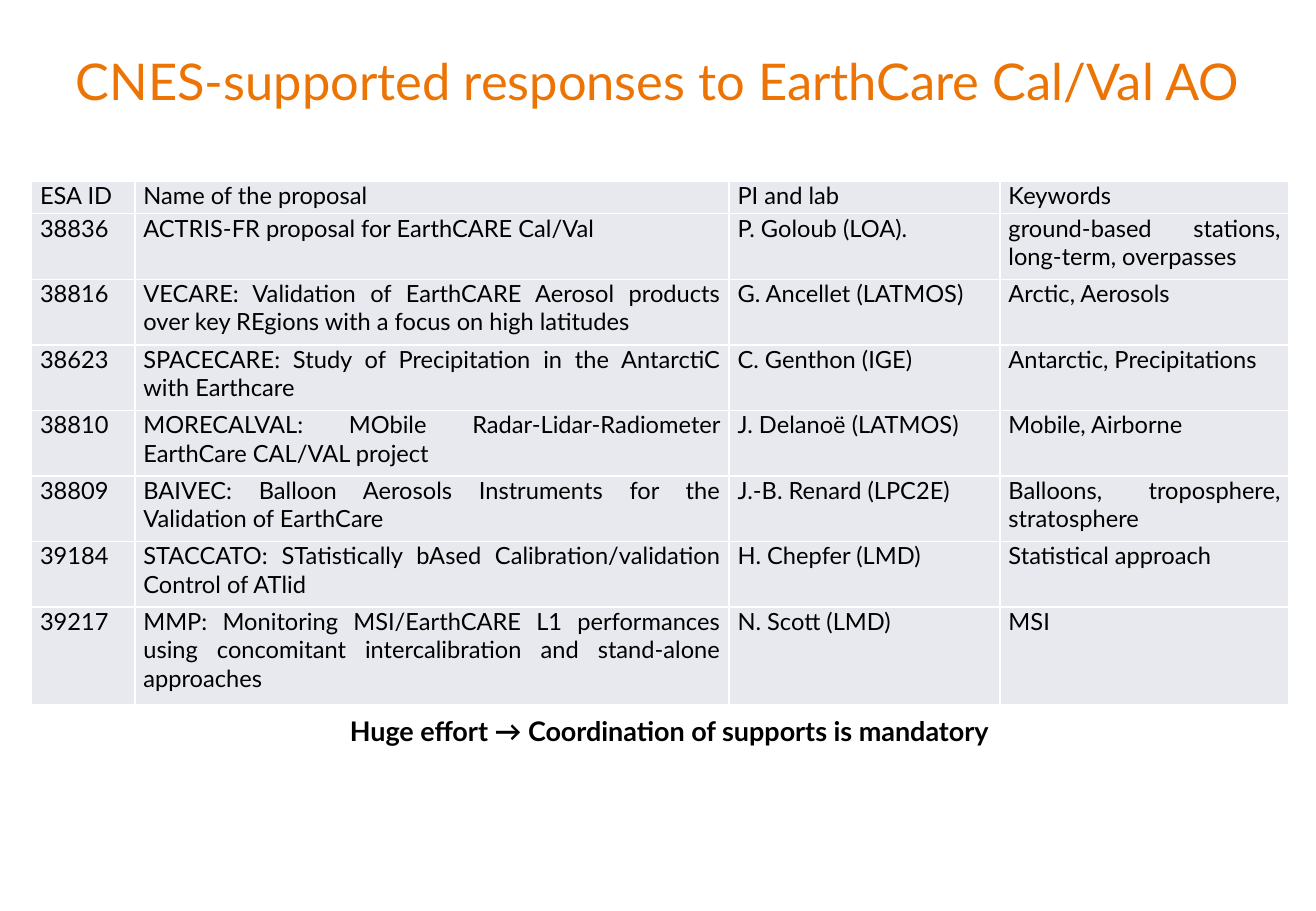
from dataclasses import dataclass

from lxml import etree
from pptx import Presentation
from pptx import util as u
from pptx.dml import color
from pptx.enum import text
from pptx.oxml import ns


@dataclass(frozen=True)
class Theme:
    """Colours, font and type sizes of the slide."""
    font: str = "Lato"
    orange: str = "EC7405"
    black: str = "000000"
    cell: str = "E7E9EE"
    border: str = "FFFFFF"
    title_size: int = 30
    table_size: int = 14
    message_size: int = 16


class SlideBuilder:
    """Adds styled elements to the current slide."""

    def __init__(self, page, theme):
        """Keep the slide and its style."""
        self.page = page
        self.theme = theme

    def add_words(self, frame, words, size, ink, align, bold=False):
        """Put one run into the first paragraph and return the paragraph."""
        frame.word_wrap = True
        frame.vertical_anchor = text.MSO_ANCHOR.TOP
        para = frame.paragraphs[0]
        para.alignment = align
        span = para.add_run()
        span.text = words
        span.font.name = self.theme.font
        span.font.size = u.Pt(size)
        span.font.bold = bold
        span.font.color.rgb = color.RGBColor.from_string(ink)
        return para

    def title(self, words, left, top, width, height):
        """Place and fill the title placeholder."""
        box = self.page.shapes.title
        box.left, box.top = u.Inches(left), u.Inches(top)
        box.width, box.height = u.Inches(width), u.Inches(height)
        frame = box.text_frame
        frame.auto_size = text.MSO_AUTO_SIZE.NONE
        frame.margin_left = frame.margin_right = 0
        frame.margin_top = frame.margin_bottom = 0
        self.add_words(frame, words, self.theme.title_size,
                       self.theme.orange, text.PP_ALIGN.CENTER)

    def message(self, words, left, top, width, height):
        """Add the bold closing message."""
        box = self.page.shapes.add_textbox(
            u.Inches(left), u.Inches(top), u.Inches(width), u.Inches(height))
        para = self.add_words(box.text_frame, words, self.theme.message_size,
                              self.theme.black, text.PP_ALIGN.CENTER,
                              bold=True)
        para.line_spacing = 1.2
        properties = para._p.get_or_add_pPr()
        properties.set("marL", str(u.Inches(0.19)))
        properties.set("indent", "0")

    def borders(self, cell):
        """Draw the four borders of a cell."""
        properties = cell._tc.get_or_add_tcPr()
        for side in ("a:lnL", "a:lnR", "a:lnT", "a:lnB"):
            line = etree.SubElement(properties, ns.qn(side), w=str(u.Pt(1)))
            fill = etree.SubElement(line, ns.qn("a:solidFill"))
            etree.SubElement(fill, ns.qn("a:srgbClr"), val=self.theme.border)

    def table(self, rows, left, top, widths, heights):
        """Add a plain table of justified text."""
        table = self.page.shapes.add_table(
            len(rows), len(widths), u.Inches(left), u.Inches(top),
            u.Inches(sum(widths)), u.Inches(sum(heights))).table
        table.first_row = table.horz_banding = False
        for column, width in zip(table.columns, widths):
            column.width = u.Inches(width)
        for row, height, entries in zip(table.rows, heights, rows):
            row.height = u.Inches(height)
            for cell, words in zip(row.cells, entries):
                cell.margin_left = cell.margin_right = u.Inches(0.07)
                cell.margin_top = cell.margin_bottom = 0
                self.borders(cell)
                cell.fill.solid()
                cell.fill.fore_color.rgb = color.RGBColor.from_string(
                    self.theme.cell)
                self.add_words(cell.text_frame, words, self.theme.table_size,
                               self.theme.black, text.PP_ALIGN.JUSTIFY)


PROPOSALS = [
    ("ESA ID", "Name of the proposal", "PI and lab", "Keywords"),
    ("38836", "ACTRIS-FR proposal for EarthCARE Cal/Val",
     "P. Goloub (LOA).", "ground-based stations, long-term, overpasses"),
    ("38816", "VECARE: Validation of EarthCARE Aerosol products over key "
     "REgions with a focus on high latitudes",
     "G. Ancellet (LATMOS)", "Arctic, Aerosols"),
    ("38623", "SPACECARE: Study of Precipitation in the AntarctiC with "
     "Earthcare", "C. Genthon (IGE)", "Antarctic, Precipitations"),
    ("38810", "MORECALVAL: MObile Radar-Lidar-Radiometer EarthCare CAL/VAL "
     "project", "J. Delanoë (LATMOS)", "Mobile, Airborne"),
    ("38809", "BAIVEC: Balloon Aerosols Instruments for the Validation of "
     "EarthCare", "J.-B. Renard (LPC2E)",
     "Balloons, troposphere, stratosphere"),
    ("39184", "STACCATO: STatistically bAsed Calibration/validation Control "
     "of ATlid", "H. Chepfer (LMD)", "Statistical approach"),
    ("39217", "MMP: Monitoring MSI/EarthCARE L1 performances using "
     "concomitant intercalibration and stand-alone approaches",
     "N. Scott (LMD)", "MSI"),
]


def main():
    """Build and save the slide."""
    deck = Presentation()
    deck.slide_width, deck.slide_height = u.Inches(10.83), u.Inches(7.5)
    page = deck.slides.add_slide(deck.slide_layouts[5])
    builder = SlideBuilder(page, Theme())
    builder.title("CNES-supported responses to EarthCare Cal/Val AO",
                  0, 0.41, 10.83, 0.83)
    builder.table(PROPOSALS, 0.26, 1.49, [0.85, 4.89, 2.23, 2.38],
                  [0.27] + [0.54] * 6 + [0.8])
    builder.message("Huge effort → Coordination of supports is mandatory",
                    0, 5.78, 10.83, 0.78)
    deck.save("out.pptx")


if __name__ == "__main__":
    main()
